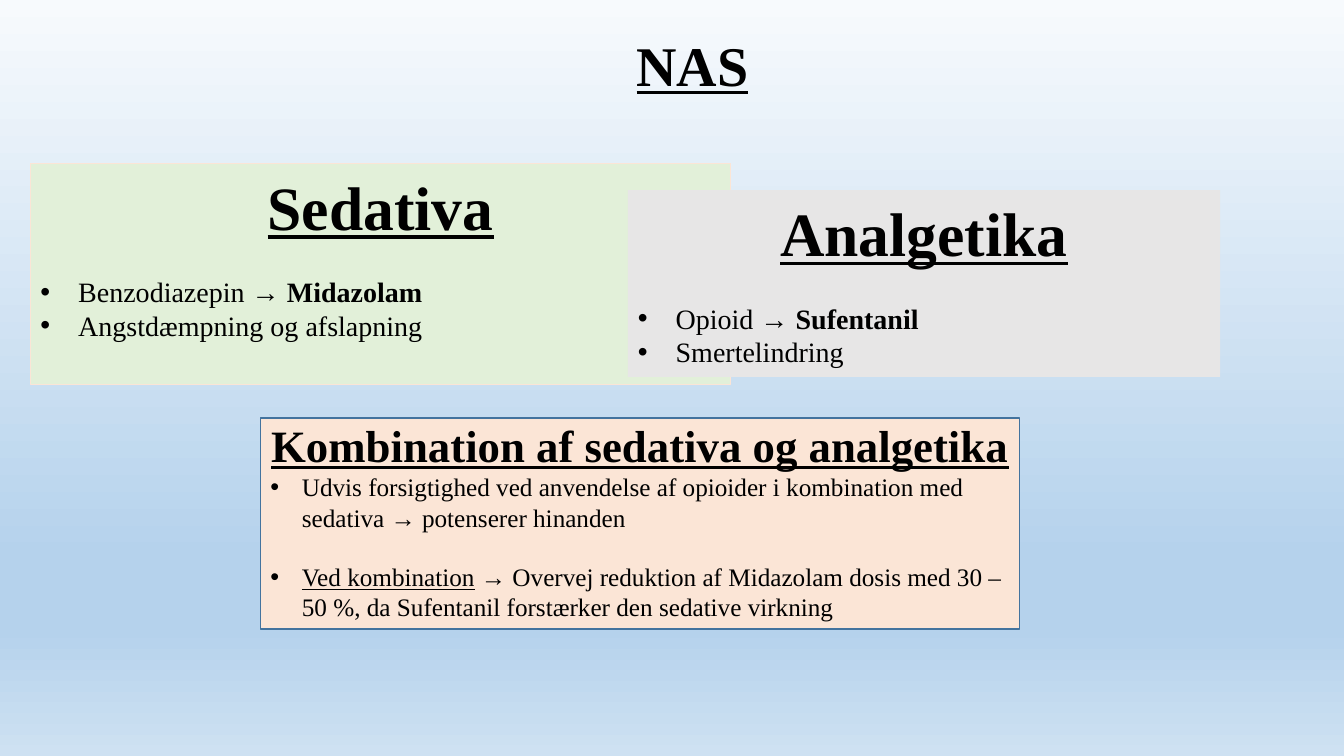
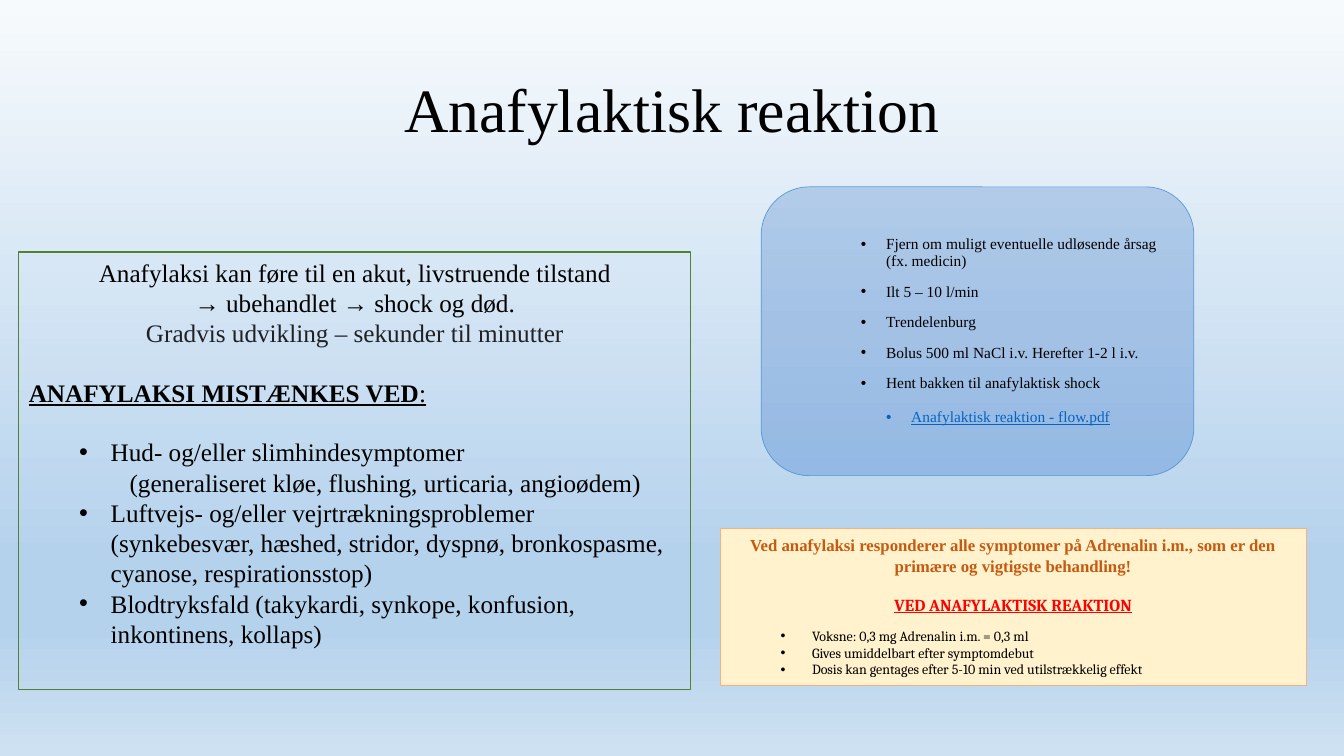
from lxml.etree import SubElement
from pptx import Presentation
from pptx.dml.color import RGBColor
from pptx.enum.shapes import MSO_SHAPE
from pptx.enum.text import MSO_ANCHOR, PP_ALIGN
from pptx.oxml.ns import qn
from pptx.util import Emu, Pt

# Shared look
FONT = "Times New Roman"
BLACK = "000000"
SKY = [(0, "F7FAFD"), (74, "B5D2EC"), (83, "B5D2EC"), (100, "CEE1F2")]
BLUE = [(0, "B1CBE9"), (50, "A3C1E5"), (100, "93B9E4")]
HEAD = {"bold": True, "line": True}


def px(n):
    return Emu(n * 9525)


def tint(code):
    return RGBColor.from_string(code)


def blend(fill, root, stops):
    """Fill from top to bottom through the given stops."""
    fill.gradient()
    fill.gradient_angle = 270
    group = root.find(".//" + qn("a:gsLst"))
    for old in list(group):
        group.remove(old)
    for pos, code in stops:
        stop = SubElement(group, qn("a:gs"), pos=str(pos * 1000))
        SubElement(stop, qn("a:srgbClr"), val=code)


# Text
def add_run(para, text, size, color=BLACK, bold=False, line=False, font=FONT):
    run = para.add_run()
    run.text = text
    face = run.font
    face.name, face.size = font, Pt(size)
    face.bold, face.underline = bold, line
    face.color.rgb = tint(color)


def add_para(frame, size, *runs, mid=False, left=0, hang=0, gap=0, after=0,
             lead=1.0, **style):
    """Add a paragraph; each run is a text or a (text, style) pair."""
    first = frame.paragraphs[0]
    para = frame.add_paragraph() if first.runs else first
    para.alignment = PP_ALIGN.CENTER if mid else PP_ALIGN.LEFT
    para.space_before, para.space_after = Pt(gap), Pt(after)
    para.line_spacing = lead
    props = para._p.get_or_add_pPr()
    props.set("marL", str(px(left)))
    props.set("indent", str(px(-hang)))
    if hang:
        SubElement(props, qn("a:buFont"), typeface="Arial")
        SubElement(props, qn("a:buChar"), char="•")
    else:
        SubElement(props, qn("a:buNone"))
    for run in runs:
        text, extra = (run, {}) if isinstance(run, str) else run
        add_run(para, text, size, **{**style, **extra})


# Elements
def add_title(slide, area, text, size, anchor, **style):
    title = slide.shapes.title
    title.left, title.top, title.width, title.height = map(px, area)
    title.text_frame.vertical_anchor = anchor
    title.text_frame.word_wrap = True
    add_para(title.text_frame, size, text, mid=True, **style)


def add_box(slide, area, fill=None, edge=None, width=0.75,
            kind=MSO_SHAPE.RECTANGLE, anchor=MSO_ANCHOR.TOP):
    box = slide.shapes.add_shape(kind, *map(px, area))
    box.shadow.inherit = False
    if fill is None:
        box.fill.background()
    elif isinstance(fill, list):
        blend(box.fill, box._element, fill)
    else:
        box.fill.solid()
        box.fill.fore_color.rgb = tint(fill)
    if edge:
        box.line.color.rgb = tint(edge)
        box.line.width = Pt(width)
    else:
        box.line.fill.background()
    frame = box.text_frame
    frame.word_wrap = True
    frame.vertical_anchor = anchor
    return frame


def add_drug(slide, area, fill, edge, name, group, drug, effect):
    frame = add_box(slide, area, fill, edge)
    add_para(frame, 44, name, mid=True, **HEAD)
    add_para(frame, 20, group + " → ", (drug, {"bold": True}),
             left=36, hang=36, gap=23)
    add_para(frame, 20, effect, left=36, hang=36)


# Slides
def add_nas(deck):
    slide = deck.slides.add_slide(deck.slide_layouts[5])
    add_title(slide, (142, 24, 1035, 74), "NAS", 40, MSO_ANCHOR.TOP, **HEAD)
    add_drug(slide, (29, 156, 667, 210), "E2F0D9", "FBE5D6", "Sedativa",
             "Benzodiazepin", "Midazolam", "Angstdæmpning og afslapning")
    add_drug(slide, (598, 181, 564, 178), "E7E6E6", None, "Analgetika",
             "Opioid", "Sufentanil", "Smertelindring")

    frame = add_box(slide, (248, 398, 723, 201), "FBE5D6", "43739E", 1)
    frame.margin_top = 0
    add_para(frame, 32, "Kombination af sedativa og analgetika",
             mid=True, **HEAD)
    add_para(frame, 18, "Udvis forsigtighed ved anvendelse af opioider i "
             "kombination med sedativa → potenserer hinanden",
             left=30, hang=30)
    add_para(frame, 18, ("Ved kombination", {"line": True}),
             " → Overvej reduktion af Midazolam dosis med 30 – 50 %, "
             "da Sufentanil forstærker den sedative virkning",
             left=30, hang=30, gap=21)


def add_signs(slide):
    frame = add_box(slide, (18, 240, 640, 417), None, "548235")
    for text, color in (
            ("Anafylaksi kan føre til en akut, livstruende tilstand", BLACK),
            ("→ ubehandlet → shock og død.", BLACK),
            ("Gradvis udvikling – sekunder til minutter", "202124")):
        add_para(frame, 18, text, mid=True, color=color)
    add_para(frame, 18, ("ANAFYLAKSI MISTÆNKES VED", {"bold": True}), ":",
             gap=21, line=True)
    item = {"left": 78, "hang": 30}
    add_para(frame, 18, "Hud- og/eller slimhindesymptomer", gap=21, **item)
    add_para(frame, 18, "(generaliseret kløe, flushing, urticaria, "
             "angioødem)", left=96)
    add_para(frame, 18, "Luftvejs- og/eller vejrtrækningsproblemer "
             "(synkebesvær, hæshed, stridor, dyspnø, bronkospasme, "
             "cyanose, respirationsstop)", **item)
    add_para(frame, 18, "Blodtryksfald (takykardi, synkope, konfusion, "
             "inkontinens, kollaps)", **item)


def add_steps(slide):
    frame = add_box(slide, (725, 178, 412, 275), BLUE, "5B9BD5", 0.5,
                    MSO_SHAPE.ROUNDED_RECTANGLE, MSO_ANCHOR.MIDDLE)
    for text in ("Fjern om muligt eventuelle udløsende årsag (fx. medicin)",
                 "Ilt 5 – 10 l/min", "Trendelenburg",
                 "Bolus 500 ml NaCl i.v. Herefter 1-2 l i.v.",
                 "Hent bakken til anafylaktisk shock"):
        add_para(frame, 11, text, left=96, hang=24, gap=10, lead=0.9)
    add_para(frame, 11, "Anafylaktisk reaktion - flow.pdf", left=120, hang=24,
             gap=10, after=8, lead=1.07, color="0563C1", line=True)


def add_dose(slide):
    frame = add_box(slide, (686, 503, 558, 150), "FFF2CC", "F4B183")
    add_para(frame, 12, "Ved anafylaksi responderer alle symptomer på "
             "Adrenalin i.m., som er den primære og vigtigste behandling!",
             mid=True, lead=1.07, color="C55A11", bold=True)
    add_para(frame, 12, "VED ANAFYLAKTISK REAKTION", mid=True, lead=1.07,
             gap=12, color="FF0000", font="Cambria", **HEAD)
    for text, gap in (
            ("Voksne: 0,3 mg Adrenalin i.m. = 0,3 ml", 9),
            ("Gives umiddelbart efter symptomdebut", 0),
            ("Dosis kan gentages efter 5-10 min ved utilstrækkelig effekt",
             0)):
        add_para(frame, 10, text, left=78, hang=30, gap=gap, font="Cambria")


def add_shock(deck):
    slide = deck.slides.add_slide(deck.slide_layouts[5])
    add_title(slide, (88, 38, 1104, 139), "Anafylaktisk reaktion", 44,
              MSO_ANCHOR.MIDDLE, lead=0.9)
    add_steps(slide)
    add_dose(slide)
    add_signs(slide)


def main():
    deck = Presentation()
    deck.slide_width, deck.slide_height = px(1280), px(720)
    master = deck.slide_master
    blend(master.background.fill, master.element, SKY)
    add_nas(deck)
    add_shock(deck)
    deck.save("out.pptx")


if __name__ == "__main__":
    main()
